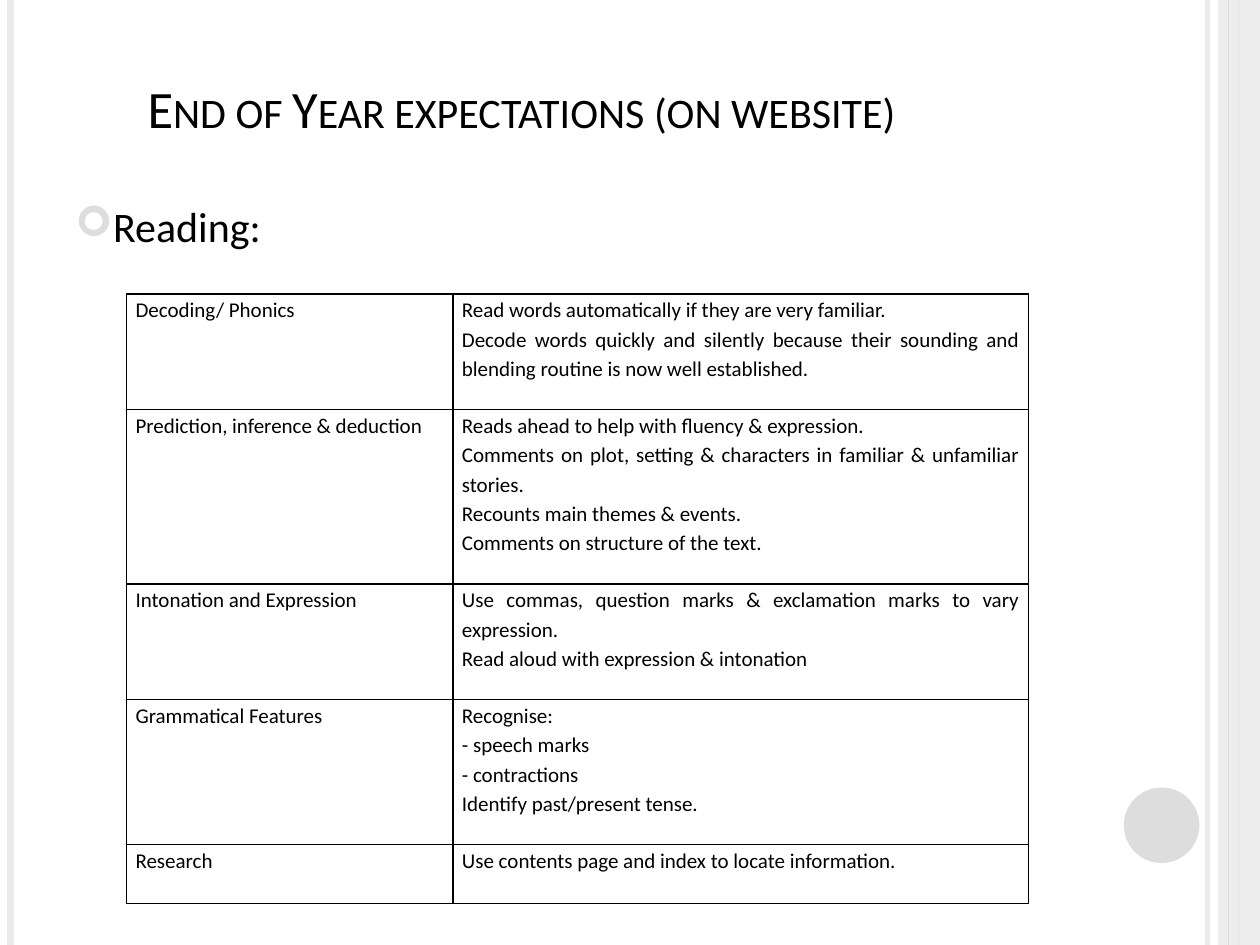
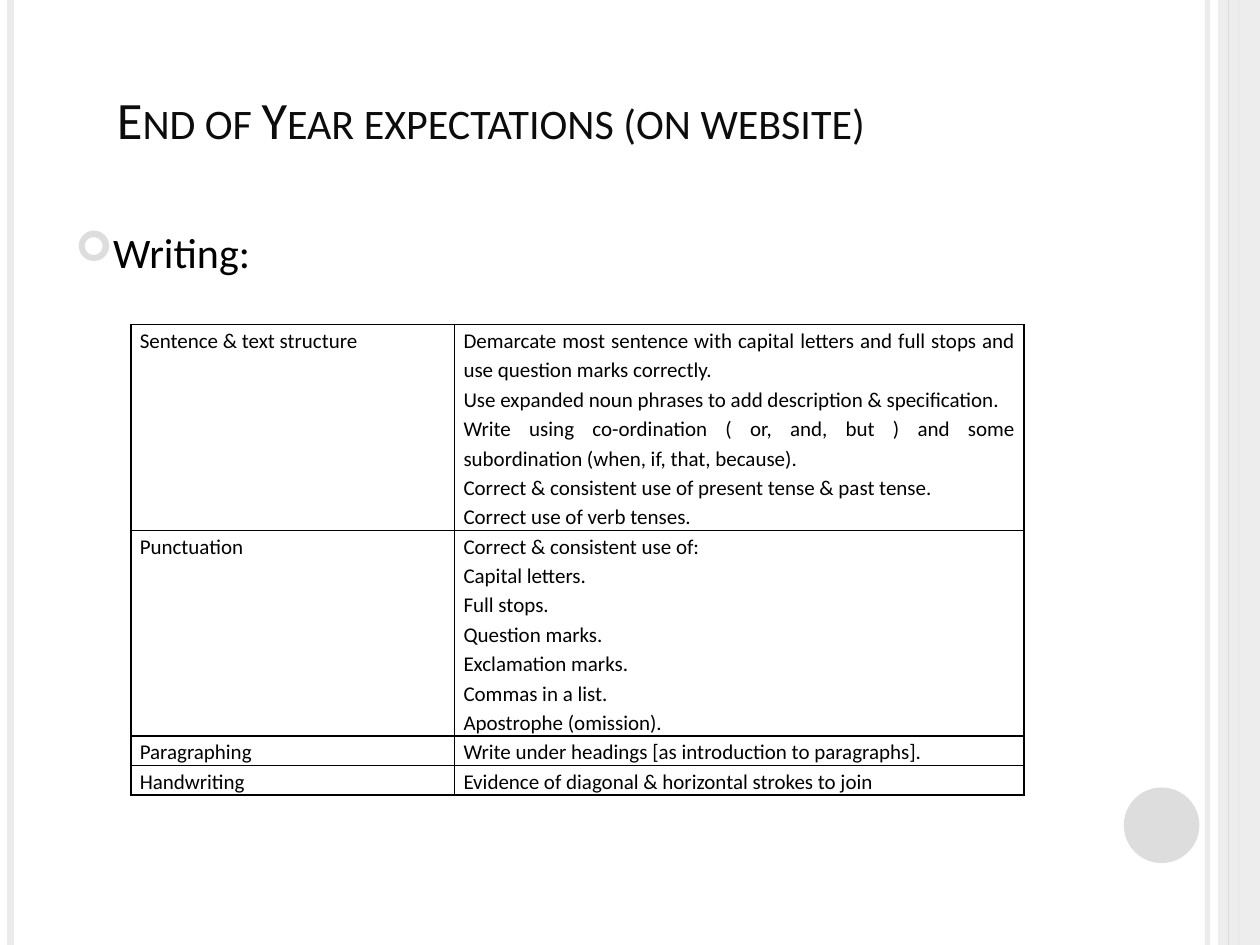
from lxml.etree import Element, SubElement
from pptx import Presentation
from pptx.dml.color import RGBColor
from pptx.enum.shapes import MSO_CONNECTOR, MSO_SHAPE
from pptx.enum.text import MSO_ANCHOR, MSO_AUTO_SIZE, PP_ALIGN
from pptx.oxml.ns import qn
from pptx.util import Pt

FONT = "Calibri"
BLACK = "000000"
PALE = "EBEBEB"
GREY = "DDDDDD"
SLIDE_WIDTH, SLIDE_HEIGHT = 720, 540
TITLE = "End of Year expectations (on website)"
RING_FONT, RING_CHARACTER = "Wingdings", "¢"

READING = [
    ("Decoding/ Phonics", 66, [
        "Read words automatically if they are very familiar.",
        "Decode words quickly and silently because their sounding and "
        "blending routine is now well established."]),
    ("Prediction, inference & deduction", 99.7, [
        "Reads ahead to help with fluency & expression.",
        "Comments on plot, setting & characters in familiar & unfamiliar stories.",
        "Recounts main themes & events.",
        "Comments on structure of the text."]),
    ("Intonation and Expression", 66, [
        "Use commas, question marks & exclamation marks to vary expression.",
        "Read aloud with expression & intonation"]),
    ("Grammatical Features", 82.9, [
        "Recognise:",
        "- speech marks",
        "- contractions",
        "Identify past/present tense."]),
    ("Research", 33.7, ["Use contents page and index to locate information."]),
]

WRITING = [
    ("Sentence & text structure", 117.6, [
        "Demarcate most sentence with capital letters and full stops and "
        "use question marks correctly.",
        "Use expanded noun phrases to add description & specification.",
        "Write using co-ordination ( or, and, but ) and some subordination "
        "(when, if, that, because).",
        "Correct & consistent use of present tense & past tense.",
        "Correct use of verb tenses."]),
    ("Punctuation", 117.6, [
        "Correct & consistent use of:",
        "Capital letters.",
        "Full stops.",
        "Question marks.",
        "Exclamation marks.",
        "Commas in a list.",
        "Apostrophe (omission)."]),
    ("Paragraphing", 16.8, ["Write under headings [as introduction to paragraphs]."]),
    ("Handwriting", 16.8, ["Evidence of diagonal & horizontal strokes to join"]),
]


def color(hex_value):
    return RGBColor.from_string(hex_value)


def set_opacity(shape, percent):
    for fill_color in shape.element.spPr.iter(qn("a:srgbClr")):
        SubElement(fill_color, qn("a:alpha"), val=str(percent * 1000))


def format_paragraph(paragraph, size, hex_value=BLACK):
    paragraph.font.name = FONT
    paragraph.font.size = Pt(size)
    paragraph.font.color.rgb = color(hex_value)


def add_vertical_rule(slide, x, width, hex_value):
    rule = slide.shapes.add_connector(
        MSO_CONNECTOR.STRAIGHT, Pt(x), Pt(0), Pt(x), Pt(SLIDE_HEIGHT))
    rule.line.color.rgb = color(hex_value)
    rule.line.width = Pt(width)
    SubElement(rule.element.spPr, qn("a:effectLst"))
    return rule


def add_plain_shape(slide, kind, left, top, width, height, hex_value):
    shape = slide.shapes.add_shape(kind, Pt(left), Pt(top), Pt(width), Pt(height))
    shape.shadow.inherit = False
    shape.fill.solid()
    shape.fill.fore_color.rgb = color(hex_value)
    shape.line.fill.background()
    return shape


def add_frame(slide):
    set_opacity(add_vertical_rule(slide, 690, 3, PALE), 93)
    add_vertical_rule(slide, 6, 4.5, PALE)
    add_vertical_rule(slide, 708, 1.5, GREY)
    band = add_plain_shape(
        slide, MSO_SHAPE.RECTANGLE, 696, 0, 24, SLIDE_HEIGHT, PALE)
    set_opacity(band, 87)
    add_vertical_rule(slide, 702, 0.75, GREY)
    add_plain_shape(slide, MSO_SHAPE.OVAL, 642.2, 450, 43.2, 43.2, GREY)


def format_title(slide, left, top, width, height, alignment, hex_value):
    title = slide.shapes.title
    title.left, title.top = Pt(left), Pt(top)
    title.width, title.height = Pt(width), Pt(height)
    frame = title.text_frame
    frame.auto_size = MSO_AUTO_SIZE.NONE
    frame.vertical_anchor = MSO_ANCHOR.BOTTOM
    paragraph = frame.paragraphs[0]
    paragraph.alignment = alignment
    run = paragraph.add_run()
    run.text = TITLE
    run._r.get_or_add_rPr().set("cap", "small")
    format_paragraph(paragraph, 30, hex_value)


def add_bullet_heading(slide, text, top):
    box = slide.shapes.add_textbox(Pt(36), Pt(top), Pt(588), Pt(384))
    box.text_frame.word_wrap = True
    paragraph = box.text_frame.paragraphs[0]
    paragraph.text = text
    format_paragraph(paragraph, 24)
    properties = paragraph._p.get_or_add_pPr()
    properties.set("marL", str(Pt(21.6)))
    properties.set("indent", str(Pt(-21.6)))
    bullet_color = Element(qn("a:buClr"))
    SubElement(bullet_color, qn("a:srgbClr"), val=GREY)
    bullet_font = Element(
        qn("a:buFont"), typeface=RING_FONT, pitchFamily="2", charset="2")
    bullet = Element(qn("a:buChar"), char=RING_CHARACTER)
    for index, part in enumerate((bullet_color, bullet_font, bullet)):
        properties.insert(index, part)


def set_borders(cell):
    properties = cell._tc.get_or_add_tcPr()
    for index, side in enumerate(("lnL", "lnR", "lnT", "lnB")):
        border = Element(qn(f"a:{side}"), w=str(Pt(1)))
        fill = SubElement(border, qn("a:solidFill"))
        SubElement(fill, qn("a:srgbClr"), val=BLACK)
        properties.insert(index, border)


def fill_cell(cell, lines):
    cell.fill.background()
    set_borders(cell)
    cell.margin_left = cell.margin_right = Pt(5.1)
    cell.margin_top = cell.margin_bottom = Pt(0)
    cell.text = "\n".join(lines)
    for paragraph in cell.text_frame.paragraphs:
        format_paragraph(paragraph, 12)
        paragraph.alignment = PP_ALIGN.JUSTIFY
        paragraph.line_spacing = 1.15


def add_expectations_table(slide, expectations, left, top, column_widths):
    height = sum(row_height for _, row_height, _ in expectations)
    table = slide.shapes.add_table(
        len(expectations), 2, Pt(left), Pt(top),
        Pt(sum(column_widths)), Pt(height)).table
    table.first_row = table.horz_banding = False
    for column, width in zip(table.columns, column_widths):
        column.width = Pt(width)
    for row, (area, row_height, statements) in zip(table.rows, expectations):
        row.height = Pt(row_height)
        fill_cell(row.cells[0], [area])
        fill_cell(row.cells[1], statements)


def add_expectations_slide(presentation, title_box, alignment, title_color,
                           heading, heading_top, expectations, table_place):
    slide = presentation.slides.add_slide(presentation.slide_layouts[5])
    add_frame(slide)
    format_title(slide, *title_box, alignment, title_color)
    add_bullet_heading(slide, heading, heading_top)
    add_expectations_table(slide, expectations, *table_place)


def main():
    presentation = Presentation()
    presentation.slide_width = Pt(SLIDE_WIDTH)
    presentation.slide_height = Pt(SLIDE_HEIGHT)
    add_expectations_slide(
        presentation, (33, 33.4, 530, 49.7), PP_ALIGN.CENTER, BLACK,
        "Reading:", 111.3, READING, (72.4, 168, (186.5, 328.8)))
    add_expectations_slide(
        presentation, (59.6, 44, 588, 45.3), PP_ALIGN.LEFT, "0C0C0C",
        "Writing:", 126, WRITING, (74.8, 185.5, (185, 325.4)))
    presentation.save("out.pptx")


if __name__ == "__main__":
    main()
